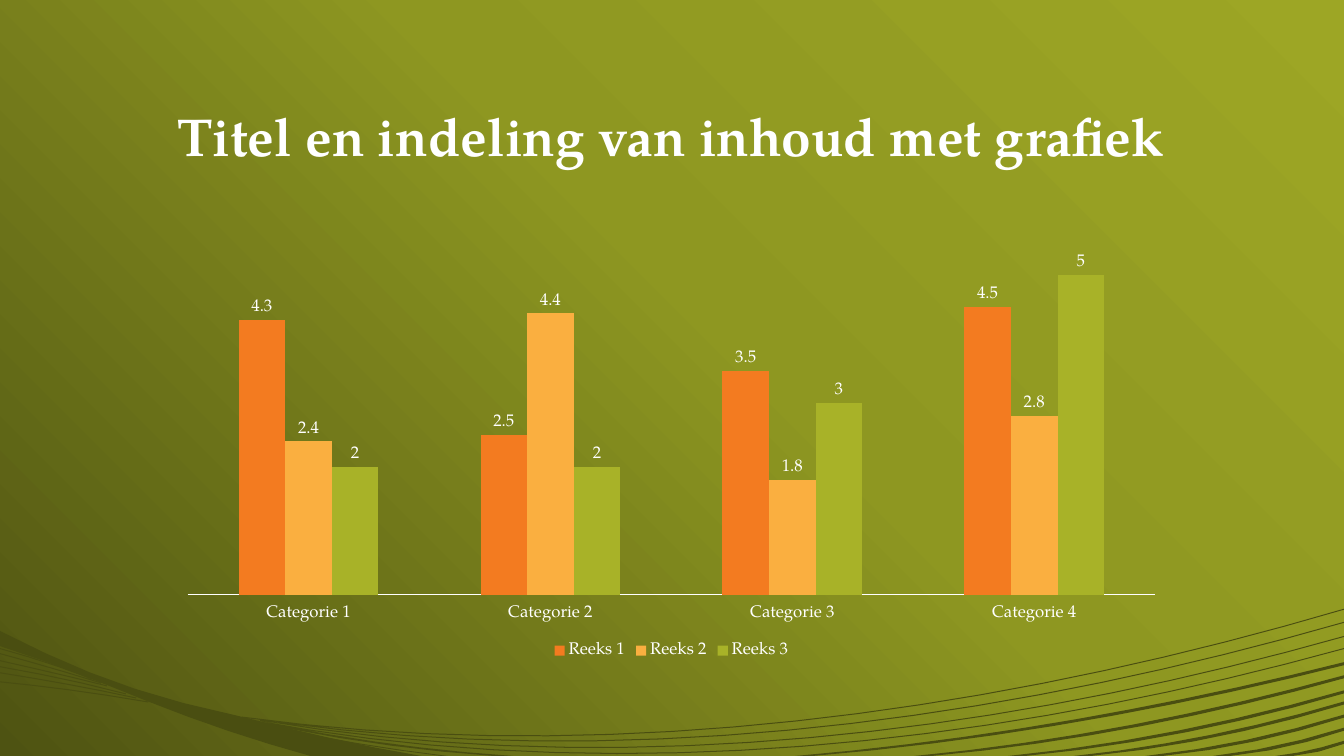
from copy import deepcopy
from dataclasses import dataclass
from math import ceil

from pptx import Presentation
from pptx.chart.data import CategoryChartData
from pptx.dml.color import RGBColor as RGB
from pptx.enum.chart import XL_CHART_TYPE as CT, XL_LABEL_POSITION as LP
from pptx.enum.chart import XL_LEGEND_POSITION as LEG, XL_TICK_LABEL_POSITION as TLP
from pptx.enum.chart import XL_TICK_MARK as TM
from pptx.enum.text import MSO_ANCHOR, MSO_AUTO_SIZE, PP_ALIGN
from pptx.oxml.ns import qn
from pptx.util import Cm, Pt


@dataclass(frozen=True)
class Theme:
    """Hold the fonts, sizes and colours of the slide."""
    font: str = "TeX Gyre Pagella"
    title: Pt = Pt(38)
    label: Pt = Pt(12)
    text: RGB = RGB.from_string("FFFFFF")
    wave: RGB = RGB.from_string("4A4E11")
    background: tuple = ((0, "9DA625"), (0.45, "8E9721"), (1, "4E5312"))
    series: tuple = ("F37B20", "FAAF40", "A8B228")


THEME = Theme()
WAVE_WIDTH = 13.33
WAVE_BOTTOM = 1.46

CATEGORIES = ["Categorie 1", "Categorie 2", "Categorie 3", "Categorie 4"]
SERIES = {
    "Reeks 1": (4.3, 2.5, 3.5, 4.5),
    "Reeks 2": (2.4, 4.4, 1.8, 2.8),
    "Reeks 3": (2, 2, 3, 5),
}

LONG_STRANDS = [
    ((2.4, 1.07), (6, 1.56), (9.8, 1.04), (WAVE_WIDTH, 0)),
    ((2.76, 1.12), (6.31, 1.61), (9.99, 1.09), (WAVE_WIDTH, 0.13)),
    ((2.58, 1.1), (6.18, 1.71), (9.93, 1.23), (WAVE_WIDTH, 0.27)),
    ((2.45, 1.09), (6.08, 1.79), (9.89, 1.34), (WAVE_WIDTH, 0.39)),
]
RISING_STRANDS = [(7.89, 0.53), (9.07, 0.66), (10, 0.81), (10.65, 0.92),
                  (11.36, 1.05), (12.03, 1.18), (12.65, 1.31)]
FALLING_STRANDS = [
    (((2.36, 1.07), (3.26, 1.27), (4.18, 1.4), (5.09, WAVE_BOTTOM)), -0.19),
    (((2.21, 1.06), (2.95, 1.24), (3.69, 1.37), (4.44, WAVE_BOTTOM)), -0.06),
]
LEFT_STRANDS = [
    ((0, 0.72), (0.41, 0.76), (0.89, 0.82), (1.47, 0.92)),
    ((0, 0.63), (0.44, 0.7), (0.89, 0.78), (1.35, 0.88)),
    ((0, 0.57), (0.4, 0.64), (0.8, 0.72), (1.25, 0.84)),
    ((0, 0.51), (0.31, 0.58), (0.75, 0.68), (1.06, 0.76)),
    ((0, 0.44), (0.3, 0.52), (0.61, 0.61), (1, 0.73)),
    ((0, 0.39), (0.29, 0.47), (0.58, 0.56), (0.91, 0.69)),
]
WEDGE = [
    (((0, 0.22), (0.78, 0.62), (1.4, 0.86), (2.35, 1.06)),
     ((0, 0.37), (0.5, 0.53), (1, 0.73), (1.47, 0.92))),
    (((2.35, 1.06), (2.95, 1.21), (3.57, 1.36), (4.18, WAVE_BOTTOM)),
     ((1.47, 0.92), (2, 1.13), (2.53, 1.31), (3.08, WAVE_BOTTOM))),
]


def curve(points):
    """Sample a cubic curve, with more steps the wider it runs."""
    steps = ceil(1.5 * (points[3][0] - points[0][0])) + 1
    for i in range(steps + 1):
        t = i / steps
        weights = ((1 - t) ** 3, 3 * t * (1 - t) ** 2, 3 * t * t * (1 - t), t ** 3)
        yield tuple(sum(w * p[k] for w, p in zip(weights, points)) for k in (0, 1))


def strand(upper, start=(0, 0.01), end=(0, 0.01)):
    """Pair a curve with its lower edge, shifted evenly from start to end."""
    lower = tuple(
        tuple(p[k] + start[k] + (end[k] - start[k]) * i / 3 for k in (0, 1))
        for i, p in enumerate(upper))
    return upper, lower


def rising(x, y):
    """Return a strand that climbs from the bottom edge to the right edge."""
    run, rise = WAVE_WIDTH - x, WAVE_BOTTOM - y
    upper = [(x + a * run, WAVE_BOTTOM - b * rise)
             for a, b in ((0, 0), (0.34, 0.17), (0.68, 0.53), (1, 1))]
    return strand(upper, (0.17, 0), (0, 0.03))


def add_bands(s, bands, left, top, unit):
    """Draw all bands as the contours of one freeform."""
    contours = [[(left + x * unit, top + y * unit)
                 for x, y in [*curve(upper), *reversed(list(curve(lower)))]]
                for upper, lower in bands]
    builder = s.shapes.build_freeform(*contours[0][0])
    for i, points in enumerate(contours):
        if i:
            builder.move_to(*points[0])
        builder.add_line_segments(points[1:], close=True)
    sp = builder.convert_to_shape()
    sp.fill.solid()
    sp.fill.fore_color.rgb = THEME.wave
    sp.line.fill.background()
    sp.shadow.inherit = False


def add_waves(s, left, top, width):
    """Draw the wedge and the curved strands along the bottom."""
    unit = width / WAVE_WIDTH
    strands = [strand(c) for c in LONG_STRANDS + LEFT_STRANDS]
    strands += [rising(x, y) for x, y in RISING_STRANDS]
    strands += [strand(c, end=(dx, 0)) for c, dx in FALLING_STRANDS]
    for bands in (WEDGE, strands):
        add_bands(s, bands, left, top, unit)


def set_background(s):
    """Fill the background with the diagonal green gradient."""
    fill = s.background.fill
    fill.gradient()
    fill.gradient_angle = 225
    stops = s._element.find(".//" + qn("a:gsLst"))
    stops.append(deepcopy(stops[-1]))
    for stop, (position, color) in zip(fill.gradient_stops, THEME.background):
        stop.position = position
        stop.color.rgb = RGB.from_string(color)


def style_font(font, size):
    """Apply the theme's typeface and text colour."""
    font.name, font.size = THEME.font, size
    font.color.rgb = THEME.text


def add_title(s, text, left, top, width, height):
    """Place and format the title placeholder."""
    sp = s.shapes.title
    sp.left, sp.top, sp.width, sp.height = left, top, width, height
    tf = sp.text_frame
    tf.word_wrap = True
    tf.auto_size = MSO_AUTO_SIZE.NONE
    tf.vertical_anchor = MSO_ANCHOR.BOTTOM
    p = tf.paragraphs[0]
    p.alignment = PP_ALIGN.LEFT
    p.line_spacing = 0.9
    r = p.add_run()
    r.text = text
    style_font(r.font, THEME.title)
    r.font.bold = True


def add_column_chart(s, left, top, width, height):
    """Add the clustered columns with labels and a legend below."""
    data = CategoryChartData()
    data.categories = CATEGORIES
    for name, values in SERIES.items():
        data.add_series(name, values)
    chart = s.shapes.add_chart(CT.COLUMN_CLUSTERED, left, top, width, height, data).chart
    style_font(chart.font, THEME.label)
    chart.has_title = False
    chart.has_legend = True
    chart.legend.position = LEG.BOTTOM
    chart.legend.include_in_layout = False
    style_font(chart.legend.font, THEME.label)
    axis = chart.category_axis
    axis.major_tick_mark = axis.minor_tick_mark = TM.NONE
    axis.tick_label_position = TLP.LOW
    axis.format.line.color.rgb = THEME.text
    axis.format.line.width = Pt(0.75)
    style_font(axis.tick_labels.font, THEME.label)
    scale = chart.value_axis
    scale.visible = scale.has_major_gridlines = False
    scale.minimum_scale, scale.maximum_scale = 0, 6
    plot = chart.plots[0]
    plot.gap_width, plot.overlap = 219, 0
    plot.vary_by_categories = False
    for series, color in zip(plot.series, THEME.series):
        series.format.fill.solid()
        series.format.fill.fore_color.rgb = RGB.from_string(color)
        labels = series.data_labels
        labels.show_value = True
        labels.position = LP.OUTSIDE_END
        style_font(labels.font, THEME.label)


def main():
    """Build and save the slide."""
    prs = Presentation()
    prs.slide_width, prs.slide_height = Cm(33.87), Cm(19.05)
    s = prs.slides.add_slide(prs.slide_layouts[5])
    set_background(s)
    add_waves(s, Cm(0), Cm(15.34), prs.slide_width)
    add_title(s, "Titel en indeling van inhoud met grafiek",
              Cm(4.22), Cm(1.12), Cm(25.4), Cm(3.23))
    add_column_chart(s, Cm(4.22), Cm(5.08), Cm(25.4), Cm(11.63))
    prs.save("out.pptx")


if __name__ == "__main__":
    main()
